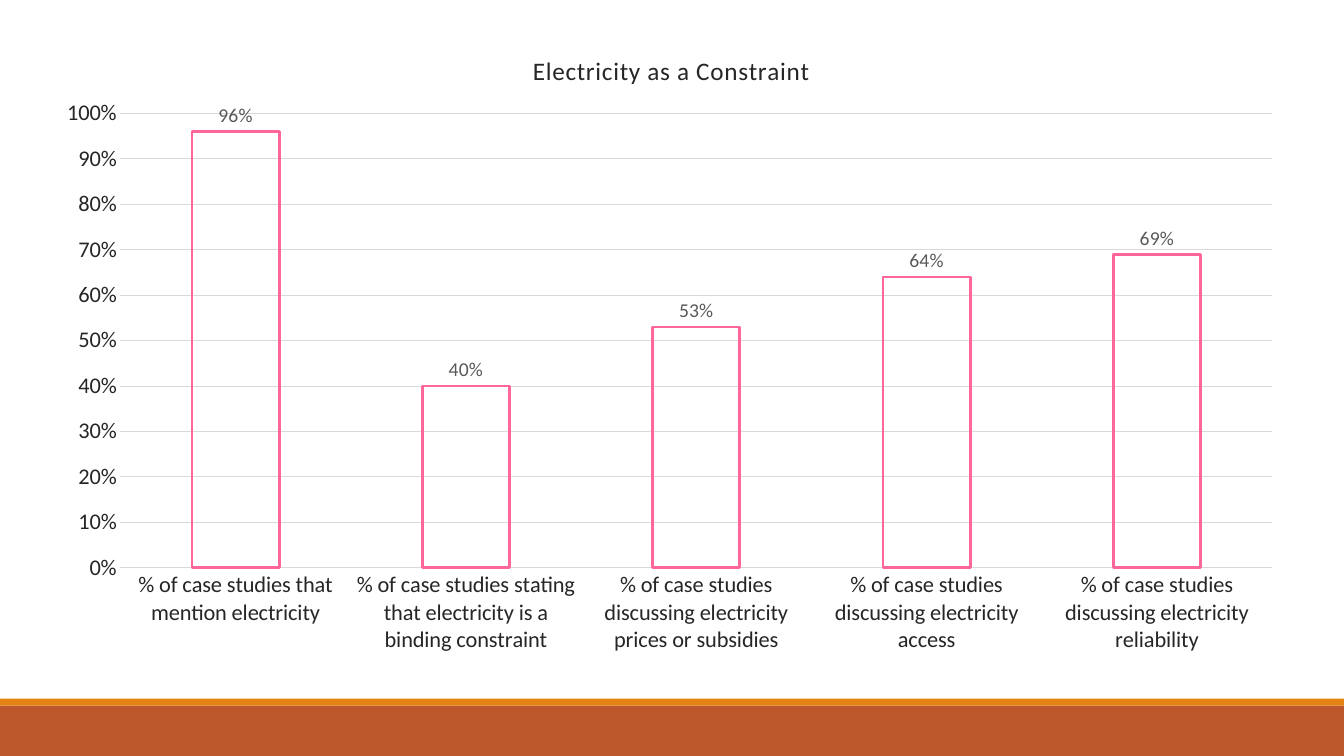
from pptx import Presentation
from pptx.chart.data import CategoryChartData
from pptx.dml.color import RGBColor
from pptx.enum.chart import XL_CHART_TYPE, XL_LABEL_POSITION, XL_TICK_MARK
from pptx.enum.shapes import MSO_SHAPE
from pptx.oxml import parse_xml
from pptx.oxml.ns import nsdecls, qn
from pptx.util import Pt

TITLE = "Electricity as a Constraint"
SHARES = {
    "% of case studies that mention electricity": 0.96,
    "% of case studies stating that electricity is a binding constraint": 0.40,
    "% of case studies discussing electricity prices or subsidies": 0.53,
    "% of case studies discussing electricity access": 0.64,
    "% of case studies discussing electricity reliability": 0.69,
}

RUST = RGBColor(0xBD, 0x58, 0x2C)
ORANGE = RGBColor(0xE4, 0x83, 0x12)
PINK = RGBColor(0xFF, 0x66, 0x99)
DARK = RGBColor(0x26, 0x26, 0x26)
GRAY = RGBColor(0x59, 0x59, 0x59)
GRID = RGBColor(0xD9, 0xD9, 0xD9)
FONT = "Calibri"
PERCENT = "0%"
COLUMNS = XL_CHART_TYPE.COLUMN_CLUSTERED
OUTSIDE = XL_LABEL_POSITION.OUTSIDE_END
NO_TICK = XL_TICK_MARK.NONE
RECTANGLE = MSO_SHAPE.RECTANGLE

WIDTH, HEIGHT = 960, 540
FOOTER_BANDS = [(504, 36, RUST), (499, 5, ORANGE)]  # top, height, colour
CHART_BOX = (32.4, 21.6, 894.2, 457.2)
PLOT_AREA = {"x": 0.06, "y": 0.13, "w": 0.92, "h": 0.71}  # shares of the chart


def set_font(font, size, color):
    for name, value in {"name": FONT, "size": Pt(size), "bold": False}.items():
        setattr(font, name, value)
    font.color.rgb = color


def place_plot(chart):
    """Fix the inner plot area at PLOT_AREA."""
    plot_area = chart.plots[0]._element.getparent()
    for layout in plot_area.findall(qn("c:layout")):
        plot_area.remove(layout)
    modes = "".join(f'<c:{key}Mode val="edge"/>' for key in "xy")
    sizes = "".join(f'<c:{key} val="{val}"/>' for key, val in PLOT_AREA.items())
    plot_area.insert(0, parse_xml(
        f'<c:layout {nsdecls("c")}><c:manualLayout><c:layoutTarget val="inner"/>'
        f"{modes}{sizes}</c:manualLayout></c:layout>"))


prs = Presentation()
prs.slide_width, prs.slide_height = Pt(WIDTH), Pt(HEIGHT)
slide = prs.slides.add_slide(prs.slide_layouts[6])

for top, height, color in FOOTER_BANDS:
    band = slide.shapes.add_shape(RECTANGLE, Pt(0), Pt(top), Pt(WIDTH), Pt(height))
    band.shadow.inherit = False
    band.fill.solid()
    band.fill.fore_color.rgb = color
    band.line.fill.background()

data = CategoryChartData(number_format=PERCENT)
data.categories = list(SHARES)
data.add_series("Series 1", list(SHARES.values()))
chart = slide.shapes.add_chart(COLUMNS, *map(Pt, CHART_BOX), data).chart
chart.has_legend = False
set_font(chart.font, 10, RGBColor(0, 0, 0))
place_plot(chart)

chart.has_title = True
chart.chart_title.include_in_layout = False
chart.chart_title.text_frame.text = TITLE
title_font = chart.chart_title.text_frame.paragraphs[0].runs[0].font
set_font(title_font, 18, DARK)
title_font._element.set("spc", "50")

for axis in (chart.category_axis, chart.value_axis):
    axis.major_tick_mark = axis.minor_tick_mark = NO_TICK
    axis.format.line.fill.background()
    set_font(axis.tick_labels.font, 16, DARK)

scale = chart.value_axis
scale.minimum_scale, scale.maximum_scale, scale.major_unit = 0, 1, 0.1
scale.tick_labels.number_format = PERCENT
scale.tick_labels.number_format_is_linked = False
scale.major_gridlines.format.line.color.rgb = GRID
scale.major_gridlines.format.line.width = Pt(0.75)

plot = chart.plots[0]
plot.gap_width, plot.overlap, plot.vary_by_categories = 164, -35, False
shares = plot.series[0]
shares.format.fill.background()
shares.format.line.color.rgb = PINK
shares.format.line.width = Pt(2)

labels = shares.data_labels
for name, value in {"show_value": True, "position": OUTSIDE,
                    "number_format": PERCENT,
                    "number_format_is_linked": False}.items():
    setattr(labels, name, value)
set_font(labels.font, 14, GRAY)

prs.save("out.pptx")
